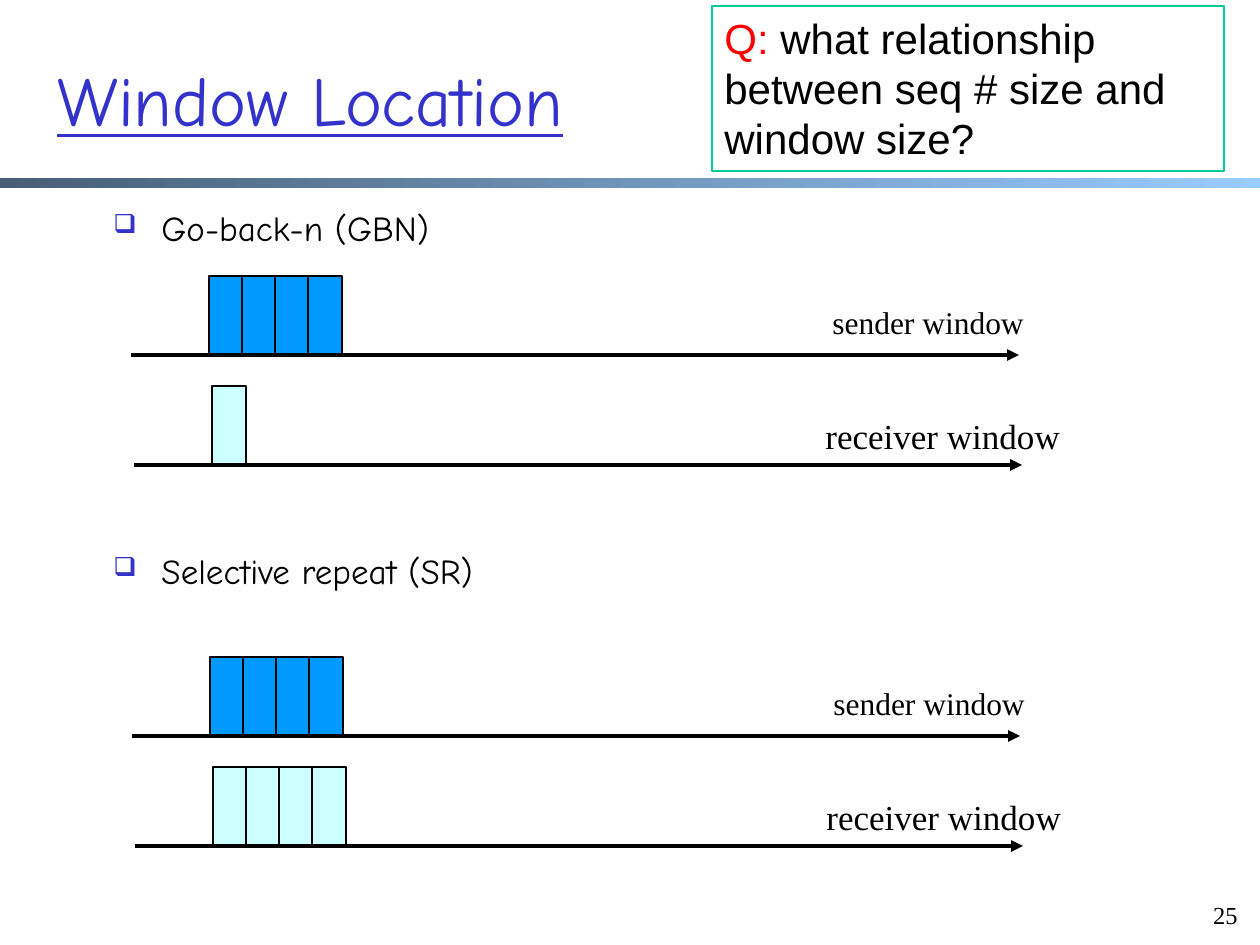
import pptx
import pptx.util
import pptx.dml.color
import pptx.enum.shapes
import pptx.enum.text
import pptx.oxml
import pptx.oxml.ns
from lxml import etree

RGB = pptx.dml.color.RGBColor
SHAPE = pptx.enum.shapes.MSO_SHAPE
ALIGN = pptx.enum.text.PP_ALIGN
ANCHOR = pptx.enum.text.MSO_ANCHOR

BLACK = RGB(0x00, 0x00, 0x00)
RED = RGB(0xFF, 0x00, 0x00)
INDIGO = RGB(0x33, 0x33, 0xCC)
GREEN = RGB(0x00, 0xCC, 0x99)
SENDER_BLUE = RGB(0x00, 0x99, 0xFF)
RECEIVER_CYAN = RGB(0xCC, 0xFF, 0xFF)
BAR_DARK = RGB(0x47, 0x5E, 0x76)
BAR_LIGHT = RGB(0x99, 0xCC, 0xFF)

CELL_W, CELL_H, CELL_PITCH = 34, 79, 33
AXIS_LENGTH = 888


def px(n):
    return pptx.util.Emu(round(n * 914400 / 126))


def add_run(p, text, size, font, color):
    r = p.add_run()
    r.text = text
    r.font.size = pptx.util.Pt(size)
    r.font.name = font
    r.font.color.rgb = color
    return r


def add_text(s, box, text, size, font, color, wrap=True, anchor=ANCHOR.TOP):
    tf = s.shapes.add_textbox(*map(px, box)).text_frame
    tf.word_wrap = wrap
    tf.vertical_anchor = anchor
    p = tf.paragraphs[0]
    return p, add_run(p, text, size, font, color)


def add_rect(s, box, line=None):
    sp = s.shapes.add_shape(SHAPE.RECTANGLE, *map(px, box))
    sp.shadow.inherit = False
    if line is None:
        sp.line.fill.background()
    else:
        sp.line.color.rgb = line
        sp.line.width = pptx.util.Pt(0.75)
    return sp


def add_header(s, left, top, width):
    # Gradient bar below the title
    bar = add_rect(s, (left, top + 178, width, 10))
    bar.fill.gradient()
    bar.fill.gradient_angle = 0
    for stop, color in zip(bar.fill.gradient_stops, (BAR_DARK, BAR_LIGHT)):
        stop.color.rgb = color
    # Title
    p, r = add_text(s, (left + 45, top + 20, 1105, 158), "Window Location",
                    40, "Comic Neue", INDIGO, anchor=ANCHOR.MIDDLE)
    r.font.underline = True


def add_question(s, box):
    sp = add_rect(s, box, GREEN)
    sp.fill.background()
    tf = sp.text_frame
    tf.word_wrap = True
    tf.vertical_anchor = ANCHOR.TOP
    p = tf.paragraphs[0]
    p.alignment = ALIGN.LEFT
    add_run(p, "Q:", 24, "Arial", RED)
    add_run(p, " what relationship between seq # size and window size?",
            24, "Arial", BLACK)


def add_heading(s, left, top, text):
    p, r = add_text(s, (left, top, 1113, 60), text, 20, "Comic Neue", BLACK)
    p.space_before = pptx.util.Pt(4)
    pPr = p._p.get_or_add_pPr()
    pPr.set("marL", str(px(111)))
    pPr.set("indent", str(px(-48)))
    color = etree.SubElement(pPr, pptx.oxml.ns.qn("a:buClr"))
    etree.SubElement(color, pptx.oxml.ns.qn("a:srgbClr"), val=str(INDIGO))
    etree.SubElement(pPr, pptx.oxml.ns.qn("a:buSzPct"), val="75000")
    etree.SubElement(pPr, pptx.oxml.ns.qn("a:buChar"), char="❑")


def add_lane(s, left, axis_y, cells, fill, label, size, label_box):
    # Window cells standing on the axis
    for i in range(cells):
        cell = add_rect(s, (left + 78 + i * CELL_PITCH, axis_y - CELL_H,
                            CELL_W, CELL_H), BLACK)
        cell.fill.solid()
        cell.fill.fore_color.rgb = fill
    # Label
    x, y, w, h = label_box
    add_text(s, (left + x, axis_y + y, w, h), label, size,
             "Times New Roman", BLACK, wrap=False)
    # Axis arrow
    axis = s.shapes.add_connector(
        pptx.enum.shapes.MSO_CONNECTOR.STRAIGHT,
        px(left), px(axis_y), px(left + AXIS_LENGTH), px(axis_y))
    axis.line.color.rgb = BLACK
    axis.line.width = pptx.util.Pt(2.25)
    etree.SubElement(axis.line._get_or_add_ln(),
                     pptx.oxml.ns.qn("a:tailEnd"), type="triangle")
    etree.SubElement(axis._element.spPr, pptx.oxml.ns.qn("a:effectLst"))


def add_protocol(s, left, top, heading, lane_x, lane_y, receiver_cells):
    add_heading(s, left, top, heading)
    x, y = left + lane_x, top + lane_y
    add_lane(s, x, y, 4, SENDER_BLUE, "sender window", 18,
             (689, -58, 217, 50))
    add_lane(s, x + 3, y + 110, receiver_cells, RECEIVER_CYAN,
             "receiver window", 20, (679, -57, 260, 54))


def add_page_number(s, box):
    p, r = add_text(s, box, "25", 14, "Times New Roman", BLACK,
                    anchor=ANCHOR.BOTTOM)
    p.alignment = ALIGN.RIGHT


def main():
    prs = pptx.Presentation()
    prs.slide_width, prs.slide_height = px(1260), px(945)
    s = prs.slides.add_slide(prs.slide_layouts[6])
    add_header(s, 0, 0, 1260)
    add_protocol(s, 38, 200, "Go-back-n (GBN)", 93, 155, 1)
    add_protocol(s, 38, 543, "Selective repeat (SR)", 94, 193, 4)
    add_question(s, (712, 6, 512, 165))
    add_page_number(s, (1192, 888, 58, 48))
    prs.save("out.pptx")


if __name__ == "__main__":
    main()
